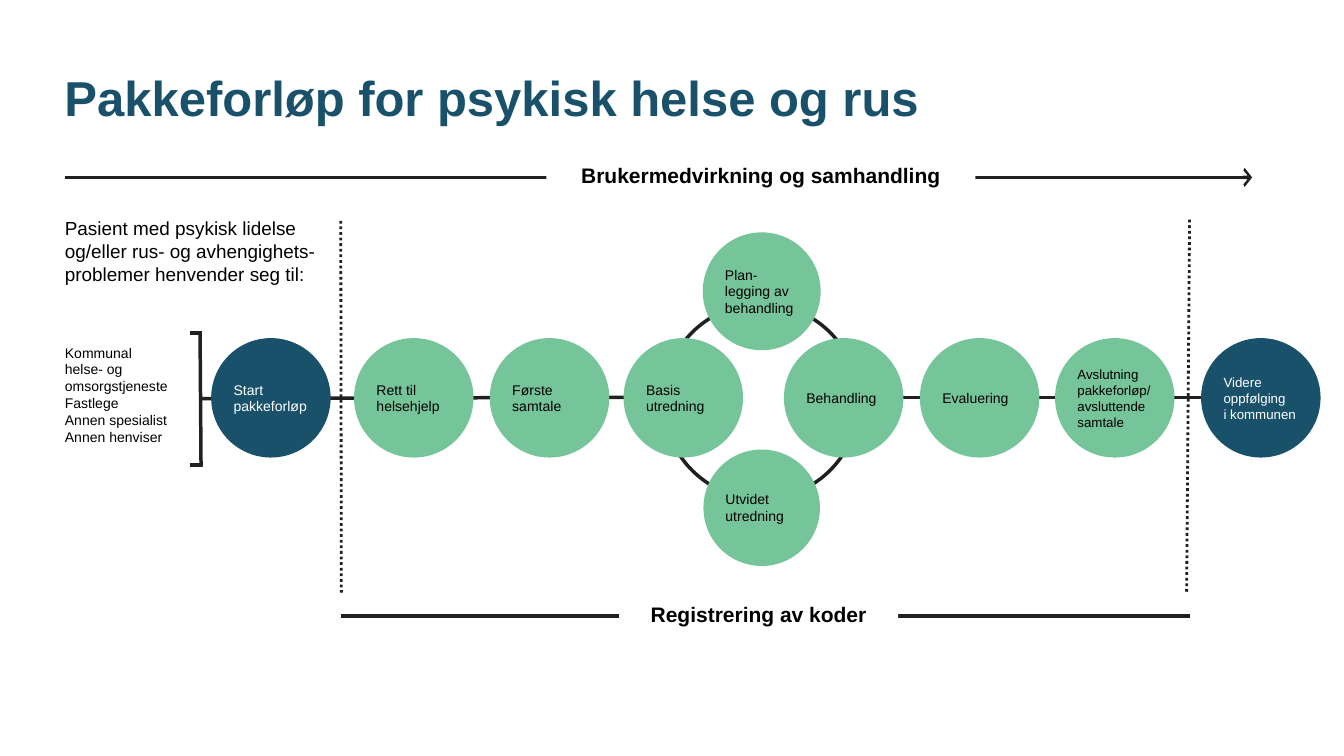
from lxml import etree
from pptx import Presentation
from pptx.dml.color import RGBColor
from pptx.enum import dml, shapes, text
from pptx.oxml import ns
from pptx.util import Cm, Pt

GREEN, BLUE, BLACK, WHITE, DARK = "76C499", "19516A", "000000", "FFFFFF", "202020"
DIAMETER, ROW = 6.02, 20.05

TITLE = "Pakkeforløp for psykisk helse og rus"
INTRO = "Pasient med psykisk lidelse og/eller rus- og avhengighets-problemer henvender seg til:"
REFERRERS = [
    "Kommunal \nhelse- og \nomsorgstjeneste\nFastlege",
    "Annen spesialist",
    "Annen henviser",
]

STAGES = [
    ("Start pakkeforløp", 13.65, ROW, DIAMETER, BLUE, WHITE, 20),
    ("Rett til helsehjelp", 20.85, ROW, DIAMETER, GREEN, BLACK, 20),
    ("Første samtale", 27.69, ROW, DIAMETER, GREEN, BLACK, 20),
    ("Basis utredning", 34.43, ROW, DIAMETER, GREEN, BLACK, 20),
    ("Plan-\nlegging av behandling", 38.38, 14.68, 5.94, GREEN, BLACK, 20),
    ("Utvidet utredning", 38.38, 25.59, 5.87, GREEN, BLACK, 20),
    ("Behandling", 42.51, ROW, DIAMETER, GREEN, BLACK, 20),
    ("Evaluering", 49.36, ROW, DIAMETER, GREEN, BLACK, 20),
    ("Avslutning pakkeforløp/\navsluttende samtale", 56.17, ROW, DIAMETER, GREEN, BLACK, 19),
    ("Videre\noppfølging \ni kommunen", 63.53, ROW, DIAMETER, BLUE, WHITE, 19),
]
CYCLE = (38.35, 20.23, 9.83)

FLOW_LINES = [(40.87, 20.02, 62.66, 20.02), (10.06, 20.09, 32.08, 20.02)]
BRACKET = [
    (9.58, 16.79, 10.19, 16.79),
    (9.58, 23.44, 10.19, 23.44),
    (10.08, 16.74, 10.13, 23.52),
]
BOUNDARIES = [(17.17, 11.13, 17.2, 29.87), (59.94, 11.07, 59.79, 29.87)]
SPANS = [
    ("Registrering av koder", (17.2, 31.04, 59.94, 31.04), (31.2, 30.38, 14.05, 1.32), False),
    ("Brukermedvirkning og samhandling", (3.25, 8.94, 63.09, 8.94), (27.53, 8.26, 21.62, 1.32), True),
]

deck = Presentation()
deck.slide_width, deck.slide_height = Cm(67.72), Cm(38.1)
slide = deck.slides.add_slide(deck.slide_layouts[6])


def rgb(value):
    return RGBColor.from_string(value)


def write(holder, paragraphs, size, color=BLACK, bold=False, align=text.PP_ALIGN.LEFT,
          anchor=text.MSO_ANCHOR.TOP, spacing=None):
    frame = holder.text_frame
    frame.word_wrap = True
    frame.vertical_anchor = anchor
    for index, content in enumerate(paragraphs):
        paragraph = frame.add_paragraph() if index else frame.paragraphs[0]
        paragraph.text = content
        paragraph.alignment = align
        if spacing:
            paragraph.line_spacing = Pt(spacing)
        for run in paragraph.runs:
            run.font.name, run.font.size, run.font.bold = "Arial", Pt(size), bold
            run.font.color.rgb = rgb(color)


def add_text(box, paragraphs, size, **look):
    holder = slide.shapes.add_textbox(*map(Cm, box))
    write(holder, paragraphs, size, **look)


def add_block(preset, box, fill=None, line=None):
    block = slide.shapes.add_shape(preset, *map(Cm, box))
    block.shadow.inherit = False
    if fill:
        block.fill.solid()
        block.fill.fore_color.rgb = rgb(fill)
    else:
        block.fill.background()
    if line:
        block.line.color.rgb = rgb(line)
        block.line.width = Pt(5)
    else:
        block.line.fill.background()
    return block


def add_circle(x, y, diameter, **look):
    box = (x - diameter / 2, y - diameter / 2, diameter, diameter)
    return add_block(shapes.MSO_SHAPE.OVAL, box, **look)


def add_line(ends, width=5, dotted=False, arrow=False):
    line = slide.shapes.add_connector(shapes.MSO_CONNECTOR.STRAIGHT, *map(Cm, ends))
    line.line.color.rgb = rgb(DARK)
    line.line.width = Pt(width)
    if dotted:
        line.line.dash_style = dml.MSO_LINE.ROUND_DOT
    if arrow:
        etree.SubElement(line.line._get_or_add_ln(), ns.qn("a:tailEnd"),
                         type="arrow", w="lg", len="sm")
    etree.SubElement(line._element.spPr, ns.qn("a:effectLst"))


add_text((3, 3.28, 59.69, 3.33), [TITLE], 70, color=BLUE, bold=True)
add_text((3.02, 10.8, 13.61, 3.71), [INTRO], 27)
add_text((3.02, 17.22, 7.04, 5.38), REFERRERS, 20)

add_circle(*CYCLE, line=DARK)
for ends in FLOW_LINES + BRACKET:
    add_line(ends)

for label, x, y, diameter, fill, color, size in STAGES:
    stage = add_circle(x, y, diameter, fill=fill)
    write(stage, [label], size, color=color, anchor=text.MSO_ANCHOR.MIDDLE)

for label, ends, box, arrow in SPANS:
    add_line(ends, arrow=arrow)
    band = add_block(shapes.MSO_SHAPE.RECTANGLE, box, fill=WHITE)
    write(band, [label], 30, bold=True, align=text.PP_ALIGN.CENTER, spacing=30)

for ends in BOUNDARIES:
    add_line(ends, width=4, dotted=True)

deck.save("out.pptx")
